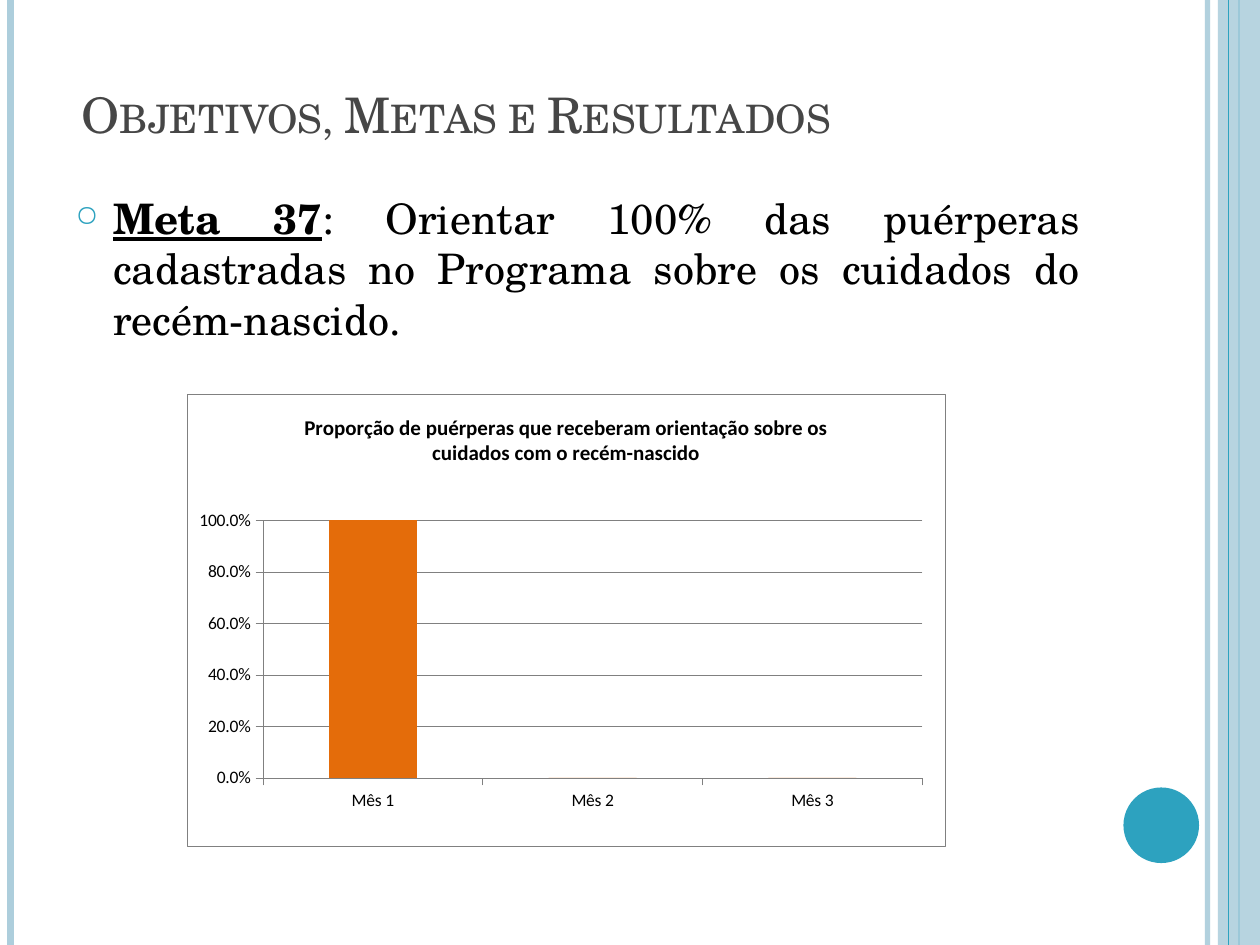
from lxml.etree import SubElement
from pptx import Presentation
from pptx.chart.data import CategoryChartData
from pptx.dml.color import RGBColor
from pptx.enum.chart import XL_CHART_TYPE, XL_TICK_MARK
from pptx.enum.shapes import MSO_CONNECTOR, MSO_SHAPE
from pptx.enum.text import MSO_ANCHOR, PP_ALIGN
from pptx.oxml import parse_xml
from pptx.oxml.ns import nsdecls, qn
from pptx.util import Pt

PALE_BLUE = RGBColor(0xAD, 0xCE, 0xDC)
TEAL = RGBColor(0x2D, 0xA2, 0xBF)
BLACK = RGBColor(0, 0, 0)
DARK_GREY = RGBColor(0x46, 0x46, 0x46)
GREY = RGBColor(0x80, 0x80, 0x80)
WHITE = RGBColor(0xFF, 0xFF, 0xFF)
ORANGE = RGBColor(0xE4, 0x6C, 0x0A)

PAGE_WIDTH, PAGE_HEIGHT = 720, 540
HAIRLINE = 0.25


class SlideBuilder:
    text_font = "TeX Gyre Schola"
    chart_font = "Calibri"

    def __init__(self, slide):
        self.slide = slide

    def set_opacity(self, shape, percent):
        for color in shape._element.spPr.iter(qn("a:srgbClr")):
            SubElement(color, qn("a:alpha"), val=str(percent * 1000))

    def vertical_line(self, x, color, width, opacity=100):
        line = self.slide.shapes.add_connector(
            MSO_CONNECTOR.STRAIGHT, Pt(x), Pt(0), Pt(x), Pt(PAGE_HEIGHT))
        line.line.color.rgb = color
        line.line.width = Pt(width)
        SubElement(line._element.spPr, qn("a:effectLst"))
        if opacity < 100:
            self.set_opacity(line, opacity)

    def filled_shape(self, kind, left, top, width, height, color, opacity=100):
        shape = self.slide.shapes.add_shape(
            kind, Pt(left), Pt(top), Pt(width), Pt(height))
        shape.shadow.inherit = False
        shape.fill.solid()
        shape.fill.fore_color.rgb = color
        shape.line.fill.background()
        if opacity < 100:
            self.set_opacity(shape, opacity)

    def text_box(self, left, top, width, height, anchor=MSO_ANCHOR.TOP):
        box = self.slide.shapes.add_textbox(
            Pt(left), Pt(top), Pt(width), Pt(height))
        box.text_frame.word_wrap = True
        box.text_frame.vertical_anchor = anchor
        return box.text_frame.paragraphs[0]

    def add_run(self, para, text, size, color, bold=False, underline=False,
                small_caps=False):
        span = para.add_run()
        span.text = text
        font = span.font
        font.name, font.size, font.color.rgb = self.text_font, Pt(size), color
        font.bold, font.underline = bold, underline
        if small_caps:
            font._element.set("cap", "small")

    def bullet(self, para, symbol, color, percent, indent):
        properties = para._p.get_or_add_pPr()
        properties.set("marL", str(Pt(indent)))
        properties.set("indent", str(-Pt(indent)))
        bullet_color = SubElement(properties, qn("a:buClr"))
        SubElement(bullet_color, qn("a:srgbClr"), val=str(color))
        SubElement(properties, qn("a:buSzPct"), val=str(percent * 1000))
        SubElement(properties, qn("a:buChar"), char=symbol)

    def style_chart_font(self, font, size, bold=False):
        font.name, font.size, font.bold = self.chart_font, Pt(size), bold
        font.color.rgb = BLACK

    def style_hairline(self, line):
        line.color.rgb = GREY
        line.width = Pt(HAIRLINE)

    def area_format(self, border):
        outline = (f'<a:solidFill><a:srgbClr val="{GREY}"/></a:solidFill>'
                   if border else "<a:noFill/>")
        return parse_xml(
            f'<c:spPr {nsdecls("c", "a")}><a:solidFill><a:srgbClr val="{WHITE}"/>'
            f'</a:solidFill><a:ln w="{Pt(HAIRLINE)}">{outline}</a:ln></c:spPr>')

    def place_plot(self, plot_area, x, y, width, height):
        for old_layout in plot_area.findall(qn("c:layout")):
            plot_area.remove(old_layout)
        layout = parse_xml(f'<c:layout {nsdecls("c")}/>')
        manual = SubElement(layout, qn("c:manualLayout"))
        settings = {"layoutTarget": "inner", "xMode": "edge", "yMode": "edge",
                    "x": x, "y": y, "w": width, "h": height}
        for name, value in settings.items():
            SubElement(manual, qn(f"c:{name}"), val=str(value))
        plot_area.insert(0, layout)

    def column_chart(self, left, top, width, height, title, categories, values):
        data = CategoryChartData(number_format="0.0%")
        data.categories = categories
        data.add_series(title, values)
        chart = self.slide.shapes.add_chart(
            XL_CHART_TYPE.COLUMN_CLUSTERED, Pt(left), Pt(top), Pt(width),
            Pt(height), data).chart
        chart.has_legend = False
        self.style_chart_font(chart.font, 10)

        # Chart title
        chart.has_title = True
        chart.chart_title.include_in_layout = False
        span = chart.chart_title.text_frame.paragraphs[0].add_run()
        span.text = title
        self.style_chart_font(span.font, 12, bold=True)

        # Columns
        plot = chart.plots[0]
        plot.gap_width = 150
        plot.vary_by_categories = False
        series_fill = plot.series[0].format.fill
        series_fill.solid()
        series_fill.fore_color.rgb = ORANGE

        # Axes
        for axis in (chart.category_axis, chart.value_axis):
            axis.major_tick_mark = XL_TICK_MARK.OUTSIDE
            axis.minor_tick_mark = XL_TICK_MARK.NONE
            self.style_chart_font(axis.tick_labels.font, 10)
            self.style_hairline(axis.format.line)
        scale = chart.value_axis
        scale.minimum_scale, scale.maximum_scale, scale.major_unit = 0, 1, 0.2
        scale.tick_labels.number_format = "0.0%"
        scale.tick_labels.number_format_is_linked = False
        scale.has_major_gridlines = True
        self.style_hairline(scale.major_gridlines.format.line)

        # Backgrounds and plot position
        chart_space = chart._chartSpace
        chart_space.find(qn("c:chart")).addnext(self.area_format(border=True))
        plot_area = chart_space.chart.plotArea
        plot_area.append(self.area_format(border=False))
        self.place_plot(plot_area, 0.1, 0.28, 0.87, 0.57)


def main():
    deck = Presentation()
    deck.slide_width, deck.slide_height = Pt(PAGE_WIDTH), Pt(PAGE_HEIGHT)
    page = SlideBuilder(deck.slides.add_slide(deck.slide_layouts[6]))

    # Side decoration
    page.vertical_line(690, PALE_BLUE, 3, opacity=93)
    page.vertical_line(6, PALE_BLUE, 4.5)
    page.vertical_line(708, TEAL, 1.5)
    page.filled_shape(MSO_SHAPE.RECTANGLE, 696, 0, 24, PAGE_HEIGHT, PALE_BLUE,
                      opacity=87)
    page.vertical_line(702, TEAL, 0.75)
    page.filled_shape(MSO_SHAPE.OVAL, 642, 450, 43.2, 43.2, TEAL)

    # Goal
    goal = page.text_box(36, 106.5, 588, 403)
    goal.alignment = PP_ALIGN.JUSTIFY
    goal.space_before = Pt(6)
    page.bullet(goal, "○", TEAL, 70, 21.6)
    page.add_run(goal, "Meta 37", 24, BLACK, bold=True, underline=True)
    page.add_run(goal, ": Orientar 100% das puérperas cadastradas no Programa "
                 "sobre os cuidados do recém-nascido.", 24, BLACK)

    # Title
    title = page.text_box(39.6, 39.6, 588, 46, MSO_ANCHOR.BOTTOM)
    page.add_run(title, "Objetivos, Metas e Resultados", 28, DARK_GREY,
                 small_caps=True)

    # Results chart
    page.column_chart(
        106.8, 225, 433.4, 258.5,
        "Proporção de puérperas que receberam orientação sobre os cuidados "
        "com o recém-nascido",
        ["Mês 1", "Mês 2", "Mês 3"], [1, 0, 0])

    deck.save("out.pptx")


if __name__ == "__main__":
    main()
